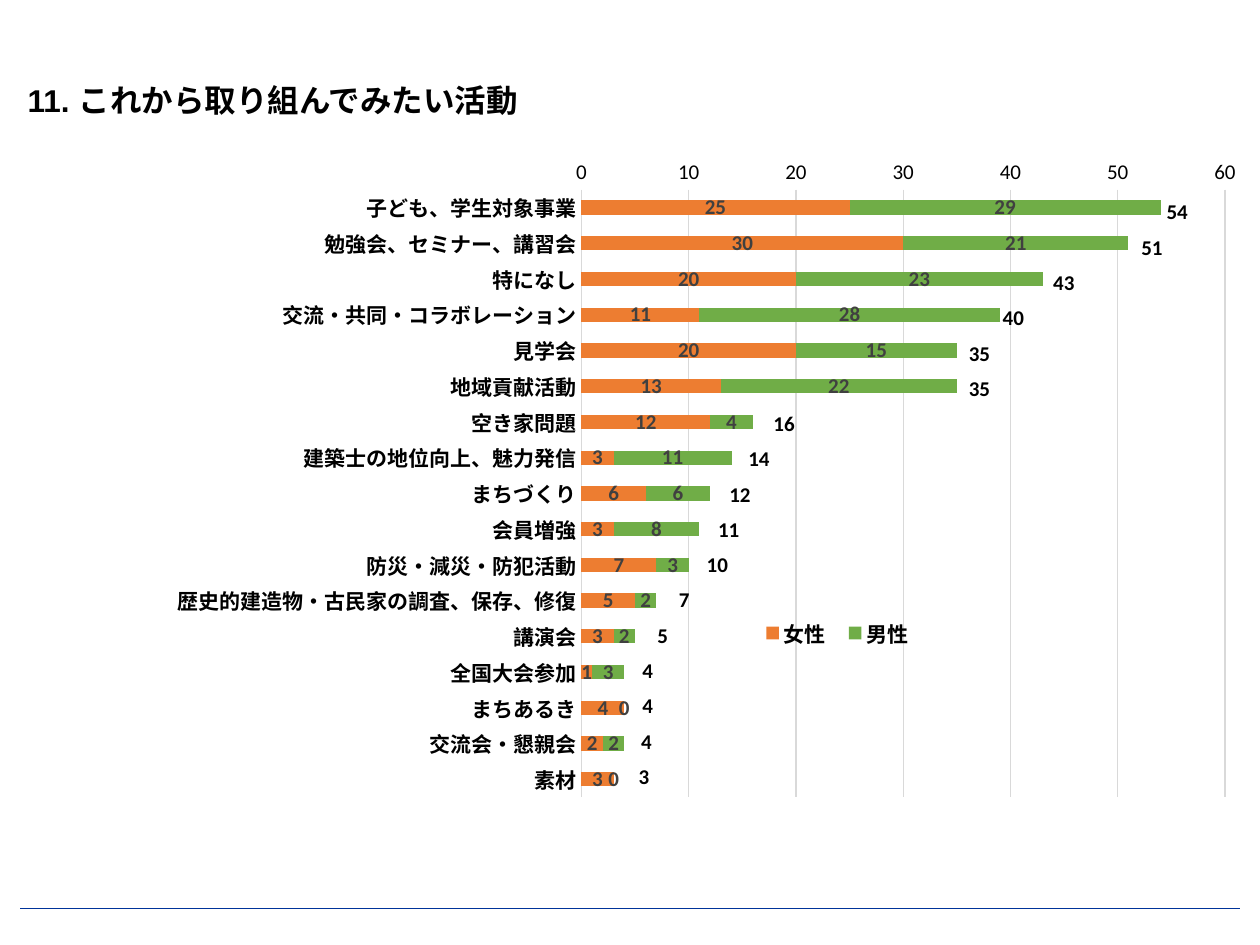
from lxml import etree
from pptx import Presentation
from pptx.chart.data import CategoryChartData
from pptx.dml.color import RGBColor
from pptx.enum.chart import XL_CHART_TYPE, XL_LABEL_POSITION, XL_LEGEND_POSITION, XL_TICK_MARK
from pptx.enum.shapes import MSO_CONNECTOR
from pptx.enum.text import MSO_ANCHOR, MSO_AUTO_SIZE, PP_ALIGN
from pptx.oxml import parse_xml
from pptx.oxml.ns import nsdecls, qn
from pptx.util import Inches, Pt

STACKED = XL_CHART_TYPE.BAR_STACKED
BOTTOM = XL_LEGEND_POSITION.BOTTOM
CENTER = XL_LABEL_POSITION.CENTER
NO_TICK = XL_TICK_MARK.NONE
STRAIGHT = MSO_CONNECTOR.STRAIGHT
MIDDLE = MSO_ANCHOR.MIDDLE
LEFT = PP_ALIGN.LEFT
GROW = MSO_AUTO_SIZE.SHAPE_TO_FIT_TEXT

# Each row: activity, women, men, printed total, left edge of the total
ACTIVITIES = [
    ("子ども、学生対象事業", 25, 29, 54, 9.16),
    ("勉強会、セミナー、講習会", 30, 21, 51, 8.96),
    ("特になし", 20, 23, 43, 8.26),
    ("交流・共同・コラボレーション", 11, 28, 40, 7.86),
    ("見学会", 20, 15, 35, 7.59),
    ("地域貢献活動", 13, 22, 35, 7.59),
    ("空き家問題", 12, 4, 16, 6.04),
    ("建築士の地位向上、魅力発信", 3, 11, 14, 5.84),
    ("まちづくり", 6, 6, 12, 5.69),
    ("会員増強", 3, 8, 11, 5.6),
    ("防災・減災・防犯活動", 7, 3, 10, 5.51),
    ("歴史的建造物・古民家の調査、保存、修復", 5, 2, 7, 5.29),
    ("講演会", 3, 2, 5, 5.12),
    ("全国大会参加", 1, 3, 4, 5),
    ("まちあるき", 4, 0, 4, 5),
    ("交流会・懇親会", 2, 2, 4, 4.99),
    ("素材", 3, 0, 3, 4.97),
]


def rgb(value):
    """Turn a hex string into a colour."""
    return RGBColor.from_string(value)


def set_font(font, size, name="Calibri", color="000000", bold=True):
    """Format a font."""
    font.size = Pt(size)
    font.name = name
    font.bold = bold
    font.color.rgb = rgb(color)


def set_line(line, color, width):
    """Format a line."""
    line.color.rgb = rgb(color)
    line.width = Pt(width)


def set_layout(element, x, y, width, height, inner=False):
    """Give a plot area or legend a fixed place, in fractions of the chart."""
    for old in element.findall(qn("c:layout")):
        element.remove(old)
    target = '<c:layoutTarget val="inner"/>' if inner else ""
    layout = parse_xml(
        f'<c:layout {nsdecls("c")}><c:manualLayout>{target}'
        '<c:xMode val="edge"/><c:yMode val="edge"/>'
        f'<c:x val="{x}"/><c:y val="{y}"/><c:w val="{width}"/><c:h val="{height}"/>'
        "</c:manualLayout></c:layout>")
    position = element.find(qn("c:legendPos"))
    if position is None:
        element.insert(0, layout)
    else:
        position.addnext(layout)


def add_title(slide, left, top, width, height):
    """Place the slide title."""
    title = slide.shapes.title
    title.left, title.top, title.width, title.height = map(Inches, (left, top, width, height))
    frame = title.text_frame
    frame.text = "11. これから取り組んでみたい活動"
    frame.word_wrap = False
    frame.auto_size = GROW
    frame.vertical_anchor = MIDDLE
    frame.paragraphs[0].alignment = LEFT
    set_font(frame.paragraphs[0].font, 18, "Arial")


def add_activity_chart(slide, left, top, width, height):
    """Place the stacked bars of women and men for each activity."""
    names, women, men, _, _ = zip(*ACTIVITIES)
    data = CategoryChartData()
    data.categories = names
    data.add_series("女性", women)
    data.add_series("男性", men)
    box = map(Inches, (left, top, width, height))
    chart = slide.shapes.add_chart(STACKED, *box, data).chart
    set_font(chart.font, 10, bold=False)
    chart.has_title = False

    chart.has_legend = True
    chart.legend.position = BOTTOM
    chart.legend.include_in_layout = False
    set_font(chart.legend.font, 12)

    activity_axis, count_axis = chart.category_axis, chart.value_axis
    activity_axis.reverse_order = True
    set_font(activity_axis.tick_labels.font, 12)
    set_line(activity_axis.format.line, "D9D9D9", 0.75)
    count_axis.minimum_scale, count_axis.maximum_scale, count_axis.major_unit = 0, 60, 10
    set_font(count_axis.tick_labels.font, 12, bold=False)
    count_axis.format.line.fill.background()
    set_line(count_axis.major_gridlines.format.line, "D9D9D9", 0.75)
    for axis in (activity_axis, count_axis):
        axis.major_tick_mark = axis.minor_tick_mark = NO_TICK

    plot = chart.plots[0]
    plot.gap_width, plot.overlap, plot.vary_by_categories = 150, 100, False
    for series, color in zip(plot.series, ("ED7D31", "70AD47")):
        series.format.fill.solid()
        series.format.fill.fore_color.rgb = rgb(color)
        labels = series.data_labels
        labels.show_value = True
        labels.position = CENTER
        set_font(labels.font, 12, color="404040")

    plot_area = chart.element.find(".//" + qn("c:plotArea"))
    set_layout(plot_area, 0.464, 0.074, 0.518, 0.858, inner=True)
    set_layout(chart.element.find(".//" + qn("c:legend")), 0.6, 0.67, 0.14, 0.06)


def add_totals(slide, top, pitch):
    """Place the total of each activity beside its bar."""
    for row, (_, _, _, total, left) in enumerate(ACTIVITIES):
        width = 0.39 if total >= 10 else 0.3
        box = map(Inches, (left, top + row * pitch, width, 0.3))
        frame = slide.shapes.add_textbox(*box).text_frame
        frame.word_wrap = False
        frame.auto_size = GROW
        frame.text = str(total)
        set_font(frame.paragraphs[0].font, 12)


def add_footer_rule(slide, left, top, width):
    """Place the thin rule at the foot of the slide."""
    rule = slide.shapes.add_connector(
        STRAIGHT, Inches(left), Inches(top), Inches(left + width), Inches(top))
    set_line(rule.line, "003399", 0.5)
    etree.SubElement(rule.element.spPr, qn("a:effectLst"))


def main():
    """Build the slide and save it."""
    deck = Presentation()
    deck.slide_width, deck.slide_height = Inches(10), Inches(7.5)
    slide = deck.slides.add_slide(deck.slide_layouts[5])
    add_footer_rule(slide, 0.16, 7.21, 9.68)
    add_title(slide, 0.12, 0.59, 4.17, 0.4)
    add_activity_chart(slide, 0.04, 1.09, 9.86, 5.62)
    add_totals(slide, 1.53, 0.28)
    deck.save("out.pptx")


if __name__ == "__main__":
    main()
